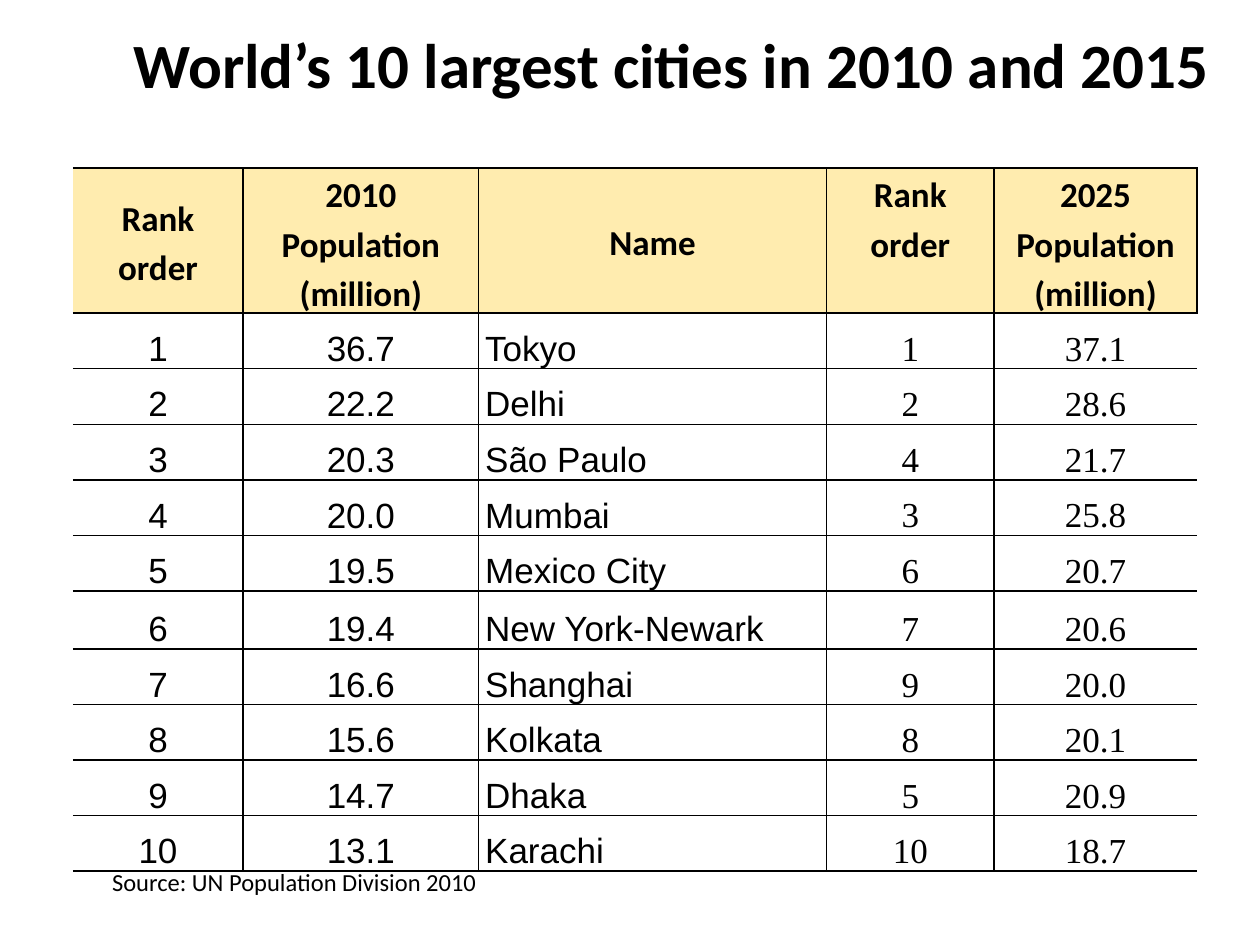
from pptx import Presentation
from pptx.dml.color import RGBColor
from pptx.enum.text import MSO_ANCHOR as Anchor, MSO_AUTO_SIZE as Fit, PP_ALIGN as Align
from pptx.oxml.ns import qn
from pptx.util import Cm, Pt
from lxml.etree import SubElement

BLACK = RGBColor(0, 0, 0)
WHITE = RGBColor(255, 255, 255)
CREAM = RGBColor(0xFF, 0xEC, 0xAF)

WIDTHS = [3.43, 4.75, 7.01, 3.38, 4.09]
HEADS = ["Rank order", "2010 Population\n(million)", "Name", "Rank order",
         "2025 Population (million)"]
CITIES = [
    ("1", "36.7", "Tokyo", "1", "37.1"),
    ("2", "22.2", "Delhi", "2", "28.6"),
    ("3", "20.3", "São Paulo", "4", "21.7"),
    ("4", "20.0", "Mumbai", "3", "25.8"),
    ("5", "19.5", "Mexico City", "6", "20.7"),
    ("6", "19.4", "New York-Newark", "7", "20.6"),
    ("7", "16.6", "Shanghai", "9", "20.0"),
    ("8", "15.6", "Kolkata", "8", "20.1"),
    ("9", "14.7", "Dhaka", "5", "20.9"),
    ("10", "13.1", "Karachi", "10", "18.7"),
]
NAME, LAST = 2, len(WIDTHS) - 1
TALL = 6  # the row that is slightly higher than the others


def style(para, size, face="Calibri", bold=False, align=Align.CENTER, lead=None):
    para.alignment = align
    para.line_spacing = lead
    font = para.font
    font.size, font.name, font.bold = Pt(size), face, bold
    font.color.rgb = BLACK


def add_edges(cell, sides):
    """Draw thin black lines on the given sides (L, R, T, B) and none elsewhere."""
    props = cell._tc.get_or_add_tcPr()
    for i, side in enumerate("LRTB"):
        line = props.makeelement(qn(f"a:ln{side}"), {"w": str(Pt(1))})
        if side in sides:
            fill = SubElement(line, qn("a:solidFill"))
            SubElement(fill, qn("a:srgbClr"), val=str(BLACK))
        else:
            SubElement(line, qn("a:noFill"))
        props.insert(i, line)


def fill_cell(cell, text, color, anchor, sides, **look):
    cell.text = text
    cell.vertical_anchor = anchor
    cell.margin_left = cell.margin_right = Cm(0.13)
    cell.margin_top = cell.margin_bottom = 0
    cell.fill.solid()
    cell.fill.fore_color.rgb = color
    add_edges(cell, sides)
    for para in cell.text_frame.paragraphs:
        style(para, 20, **look)


def add_title(slide, text):
    title = slide.shapes.title
    title.left, title.top, title.width, title.height = Cm(2.11), Cm(0.64), Cm(22.86), Cm(1.27)
    title.text = text
    title.text_frame.vertical_anchor = Anchor.MIDDLE
    style(title.text_frame.paragraphs[0], 36, bold=True)


def add_cities(slide):
    frame = slide.shapes.add_table(len(CITIES) + 1, len(WIDTHS), Cm(1.47), Cm(3.39),
                                   Cm(sum(WIDTHS)), Cm(14.07))
    table = frame.table
    table.first_row = table.horz_banding = False
    for col, width in zip(table.columns, WIDTHS):
        col.width = Cm(width)
    for r, row in enumerate(table.rows):
        row.height = Cm(2.82 if r == 0 else 1.17 if r == TALL else 1.12)

    for c, text in enumerate(HEADS):
        anchor = Anchor.TOP if c == NAME + 1 else Anchor.MIDDLE
        fill_cell(table.cell(0, c), text, CREAM, anchor, "RTB" if c == 0 else "LRTB",
                  bold=True, lead=1.15)
    for r, city in enumerate(CITIES, 1):
        for c, text in enumerate(city):
            sides = "TB" + ("L" if c > 0 else "") + ("R" if c < LAST else "")
            later = c > NAME
            fill_cell(table.cell(r, c), text, WHITE, Anchor.BOTTOM, sides,
                      face="Times New Roman" if later else "Arial",
                      align=Align.LEFT if c == NAME else Align.CENTER,
                      lead=None if later else 1.15)


def add_source(slide, text):
    box = slide.shapes.add_textbox(Cm(2.01), Cm(17.35), Cm(8.74), Cm(0.86))
    frame = box.text_frame
    frame.word_wrap = False
    frame.auto_size = Fit.SHAPE_TO_FIT_TEXT
    frame.text = text
    style(frame.paragraphs[0], 14, align=Align.LEFT)


def main():
    deck = Presentation()
    deck.slide_width, deck.slide_height = Cm(25.4), Cm(19.05)
    slide = deck.slides.add_slide(deck.slide_layouts[5])
    add_title(slide, "World’s 10 largest cities in 2010 and 2015")
    add_source(slide, "Source: UN Population Division 2010")
    add_cities(slide)
    deck.save("out.pptx")


if __name__ == "__main__":
    main()
